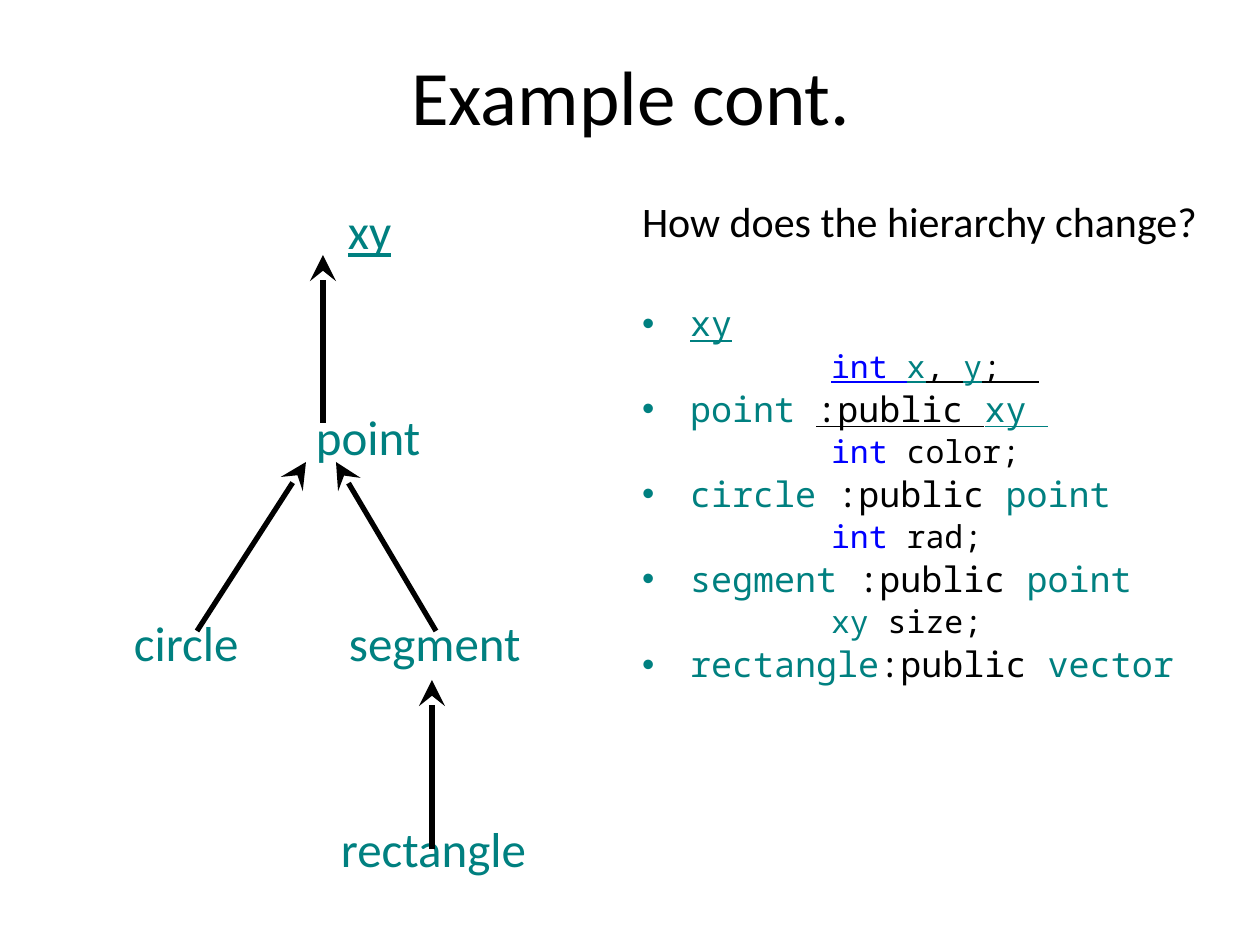
from lxml.etree import SubElement as Sub
from pptx import Presentation as Deck
from pptx.dml.color import RGBColor as Rgb
from pptx.enum.shapes import MSO_CONNECTOR as Link
from pptx.enum.text import MSO_ANCHOR as Anchor, PP_ALIGN as Align
from pptx.oxml.ns import qn
from pptx.util import Pt

HUES = {"ink": "000000", "type": "008080", "key": "0000FF"}
SCALE = 914400 / 126


def emu(px):
    return round(px * SCALE)


class Page:
    """Draws styled text and arrows on the current slide."""

    sans, mono = "Calibri", "Noto Sans Mono"
    inset = (12, 6)

    def __init__(self, slide):
        self.shapes = slide.shapes

    def hue(self, name):
        return Rgb.from_string(HUES[name])

    def box(self, x, y, w, h, inset=inset):
        frame = self.shapes.add_textbox(*map(emu, (x, y, w, h))).text_frame
        frame.word_wrap = True
        frame.margin_left = frame.margin_right = emu(inset[0])
        frame.margin_top = frame.margin_bottom = emu(inset[1])
        return frame

    def font(self, para, face, size, hue=None):
        para.font.name, para.font.size = face, Pt(size)
        if hue:
            para.font.color.rgb = self.hue(hue)

    def title(self, text, *area):
        frame = self.box(*area)
        frame.vertical_anchor = Anchor.MIDDLE
        para = frame.paragraphs[0]
        para.text, para.alignment = text, Align.CENTER
        self.font(para, self.sans, 44, "ink")

    def label(self, text, x, y, under=False):
        para = self.box(x, y, 200, 60, (0, 0)).paragraphs[0]
        para.text = text
        self.font(para, self.sans, 28, "type")
        para.runs[0].font.underline = under

    def head(self, frame, text):
        para = frame.paragraphs[0]
        para.text, para.line_spacing = text, 0.9
        self.font(para, self.sans, 24, "ink")

    def code(self, frame, runs, size, left, gap=3.8, mark=None):
        para = frame.add_paragraph()
        para.line_spacing, para.space_before = 0.9, Pt(gap)
        props = para._p.get_or_add_pPr()
        props.set("marL", str(emu(left)))
        props.set("indent", str(emu(-left if mark else 0)))
        if mark:
            Sub(props, qn("a:buFont")).set("typeface", "Arial")
            Sub(props, qn("a:buChar")).set("char", mark)
        self.font(para, self.mono, size)
        for text, hue, *under in runs:
            run = para.add_run()
            run.text = text
            run.font.color.rgb = self.hue(hue)
            run.font.underline = bool(under)

    def arrow(self, *ends):
        link = self.shapes.add_connector(Link.STRAIGHT, *map(emu, ends))
        link.line.width = Pt(3)
        link.line.color.rgb = self.hue("ink")
        tip = Sub(link.line._get_or_add_ln(), qn("a:tailEnd"))
        for key, value in (("type", "stealth"), ("w", "lg"), ("len", "lg")):
            tip.set(key, value)
        Sub(link._element.spPr, qn("a:effectLst"))


def main():
    deck = Deck()
    deck.slide_width, deck.slide_height = emu(1260), emu(945)
    page = Page(deck.slides.add_slide(deck.slide_layouts[6]))

    page.title("Example cont.", 64, 16, 1134, 158)

    top, step = 201, 206
    tree = [
        ("xy", 348, 0), ("point", 316, 1), ("circle", 134, 2),
        ("segment", 349, 2), ("rectangle", 341, 3),
    ]
    for name, x, row in tree:
        page.label(name, x, top + row * step, under=row == 0)

    for ends in [(432, 849, 432, 680), (197, 631, 306, 462),
                 (436, 631, 336, 462), (323, 423, 323, 255)]:
        page.arrow(*ends)

    body = page.box(630, 195, 598, 725)
    page.head(body, "How does the hierarchy change?")
    rules = [
        ([("xy", "type", "u")],
         [("int ", "key", "u"), ("x", "type", "u"), (", ", "ink", "u"),
          ("y", "type", "u"), (";  ", "ink", "u")]),
        ([("point ", "type"), (":public ", "ink", "u"), ("xy ", "type", "u")],
         [("int ", "key"), ("color;", "ink")]),
        ([("circle ", "type"), (":public ", "ink"), ("point", "type")],
         [("int ", "key"), ("rad;", "ink")]),
        ([("segment ", "type"), (":public ", "ink"), ("point", "type")],
         [("xy ", "type"), ("size;", "ink")]),
        ([("rectangle", "type"), (":public ", "ink"), ("vector", "type")], None),
    ]
    for i, (name, field) in enumerate(rules):
        page.code(body, name, 20, 48, 3.8 if i else 34.5, "•")
        if field:
            page.code(body, field, 18, 189)

    deck.save("out.pptx")


if __name__ == "__main__":
    main()
